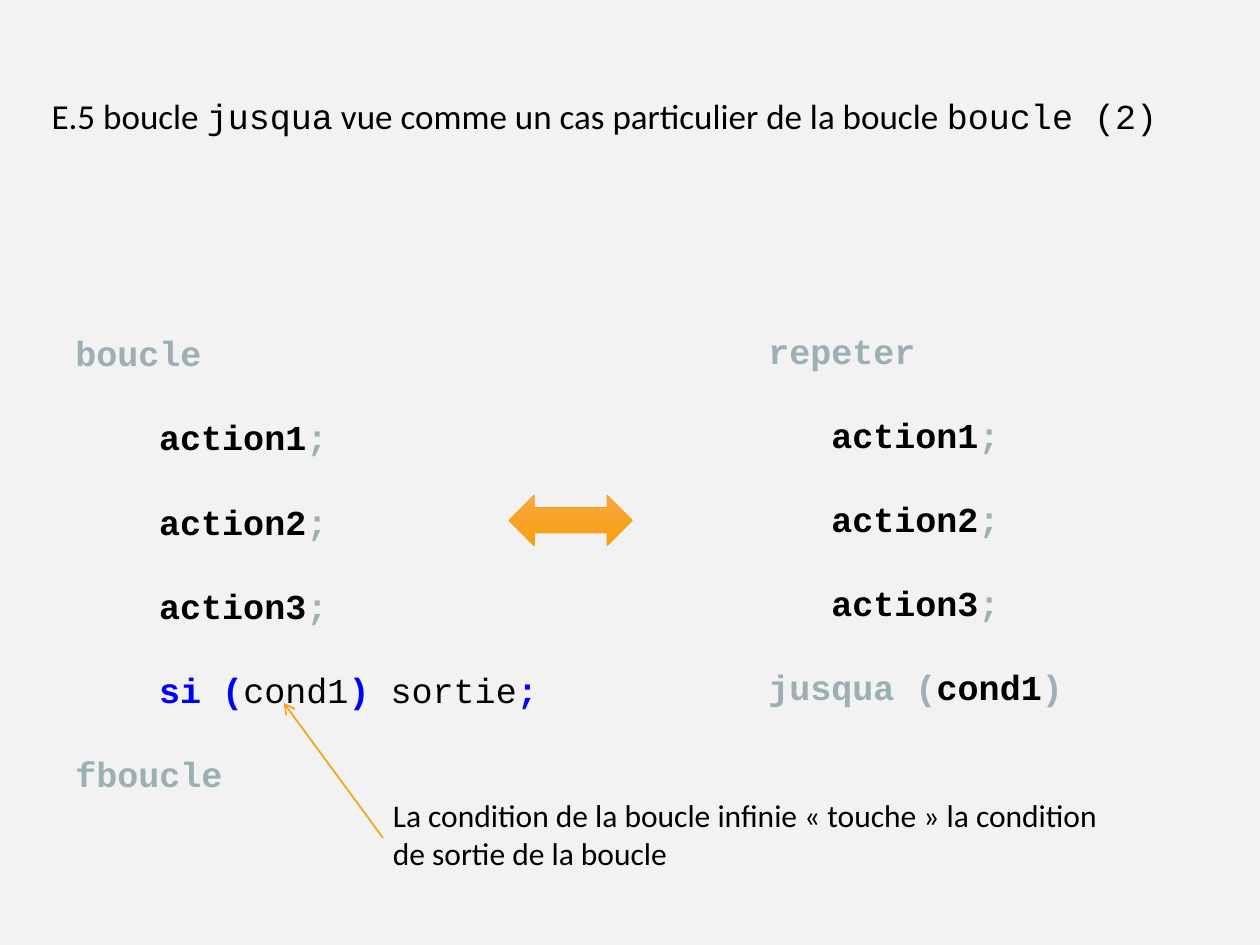
from dataclasses import dataclass
from typing import NamedTuple

from lxml import etree
from pptx import Presentation
from pptx import util as u
from pptx.dml.color import RGBColor
from pptx.enum import shapes, text
from pptx.oxml.ns import qn


@dataclass(frozen=True)
class Theme:
    background: RGBColor = RGBColor(0xF2, 0xF2, 0xF2)
    ink: RGBColor = RGBColor(0, 0, 0)
    keyword: RGBColor = RGBColor(0x9B, 0xAF, 0xB5)
    exit_test: RGBColor = RGBColor(0, 0, 0xFF)
    accent: RGBColor = RGBColor(0xF6, 0xA2, 0x1D)
    arrow_top: RGBColor = RGBColor(0xF7, 0xA9, 0x42)
    arrow_bottom: RGBColor = RGBColor(0xF9, 0x9E, 0x0F)
    prose: str = "Calibri"
    code: str = "Courier New"
    main_size: u.Pt = u.Pt(20)
    note_size: u.Pt = u.Pt(18)


T = Theme()


class Box(NamedTuple):
    left: float
    top: float
    width: float
    height: float

    def lengths(self) -> list:
        return [u.Cm(v) for v in self]


class Run(NamedTuple):
    text: str
    color: RGBColor = T.ink
    font: str = T.code
    bold: bool = True
    size: u.Pt = T.main_size


class Line(NamedTuple):
    runs: list[Run]
    indented: bool = False


class Listing(NamedTuple):
    box: Box
    indent: float
    wrap: bool
    lines: list[Line]


def add_runs(p, runs: list[Run]) -> None:
    for run in runs:
        r = p.add_run()
        r.text = run.text
        r.font.name, r.font.size, r.font.bold = run.font, run.size, run.bold
        r.font.color.rgb = run.color


def prepare_frame(sp, wrap: bool):
    tf = sp.text_frame
    tf.word_wrap = wrap
    tf.auto_size = text.MSO_AUTO_SIZE.SHAPE_TO_FIT_TEXT
    tf.vertical_anchor = text.MSO_ANCHOR.TOP
    return tf


def add_listing(s, listing: Listing) -> None:
    tf = prepare_frame(s.shapes.add_textbox(*listing.box.lengths()), listing.wrap)
    for i, line in enumerate(listing.lines):
        p = tf.add_paragraph() if i else tf.paragraphs[0]
        p.line_spacing = 2.0
        if line.indented:
            p._p.get_or_add_pPr().set("marL", str(u.Cm(listing.indent)))
        add_runs(p, line.runs)


def add_title(s, box: Box, runs: list[Run]) -> None:
    sp = s.shapes.title
    sp.left, sp.top, sp.width, sp.height = box.lengths()
    p = prepare_frame(sp, False).paragraphs[0]
    p.alignment = text.PP_ALIGN.CENTER
    add_runs(p, runs)


def add_equivalence_arrow(s, box: Box) -> None:
    sp = s.shapes.add_shape(shapes.MSO_SHAPE.LEFT_RIGHT_ARROW, *box.lengths())
    sp.shadow.inherit = False
    sp.fill.gradient()
    sp.fill.gradient_angle = 270
    for stop, color in zip(sp.fill.gradient_stops, (T.arrow_top, T.arrow_bottom)):
        stop.color.rgb = color
    sp.line.color.rgb = T.accent
    sp.line.width = u.Pt(0.5)


def add_pointer(s, start: tuple[float, float], end: tuple[float, float]) -> None:
    sp = s.shapes.add_connector(shapes.MSO_CONNECTOR.STRAIGHT,
                                *(u.Cm(v) for v in start + end))
    sp.line.color.rgb = T.accent
    sp.line.width = u.Pt(1)
    etree.SubElement(sp.line._get_or_add_ln(), qn("a:tailEnd"), type="arrow")
    etree.SubElement(sp._element.spPr, qn("a:effectLst"))


def add_note(s, box: Box, note: str) -> None:
    tf = prepare_frame(s.shapes.add_textbox(*box.lengths()), True)
    add_runs(tf.paragraphs[0],
             [Run(note, font=T.prose, bold=False, size=T.note_size)])


def keyword_line(word: str) -> Line:
    return Line([Run(word, T.keyword)])


ACTIONS = [Line([Run(f"action{n}"), Run(";", T.keyword)], True) for n in (1, 2, 3)]

INFINITE_LOOP = Listing(Box(1.27, 5.72, 10.24, 10.41), 1.69, False, [
    keyword_line("boucle"),
    *ACTIONS,
    Line([Run("si (", T.exit_test), Run("cond1", bold=False),
          Run(") ", T.exit_test), Run("sortie", bold=False),
          Run(";", T.exit_test)], True),
    keyword_line("fboucle"),
])

UNTIL_LOOP = Listing(Box(15.24, 5.67, 8.23, 8.71), 1.27, True, [
    keyword_line("repeter"),
    *ACTIONS,
    Line([Run("jusqua (", T.keyword), Run("cond1"), Run(")", T.keyword)]),
])

TITLE = [
    Run("E.5 boucle ", font=T.prose, bold=False),
    Run("jusqua", bold=False),
    Run(" vue comme un cas particulier de la boucle ", font=T.prose, bold=False),
    Run("boucle (2)", bold=False),
]


def main() -> None:
    prs = Presentation()
    prs.slide_width, prs.slide_height = u.Cm(25.4), u.Cm(19.05)
    s = prs.slides.add_slide(prs.slide_layouts[5])
    s.background.fill.solid()
    s.background.fill.fore_color.rgb = T.background

    # Title
    add_title(s, Box(0.64, 1.78, 23.09, 1.12), TITLE)

    # The two equivalent loops
    for listing in (INFINITE_LOOP, UNTIL_LOOP):
        add_listing(s, listing)
    add_equivalence_arrow(s, Box(10.26, 9.98, 2.49, 1.02))

    # Remark on the exit condition
    add_pointer(s, (7.72, 16.89), (5.72, 14.17))
    add_note(s, Box(7.67, 15.93, 15.14, 1.8),
             "La condition de la boucle infinie « touche » la condition "
             "de sortie de la boucle")

    prs.save("out.pptx")


if __name__ == "__main__":
    main()
